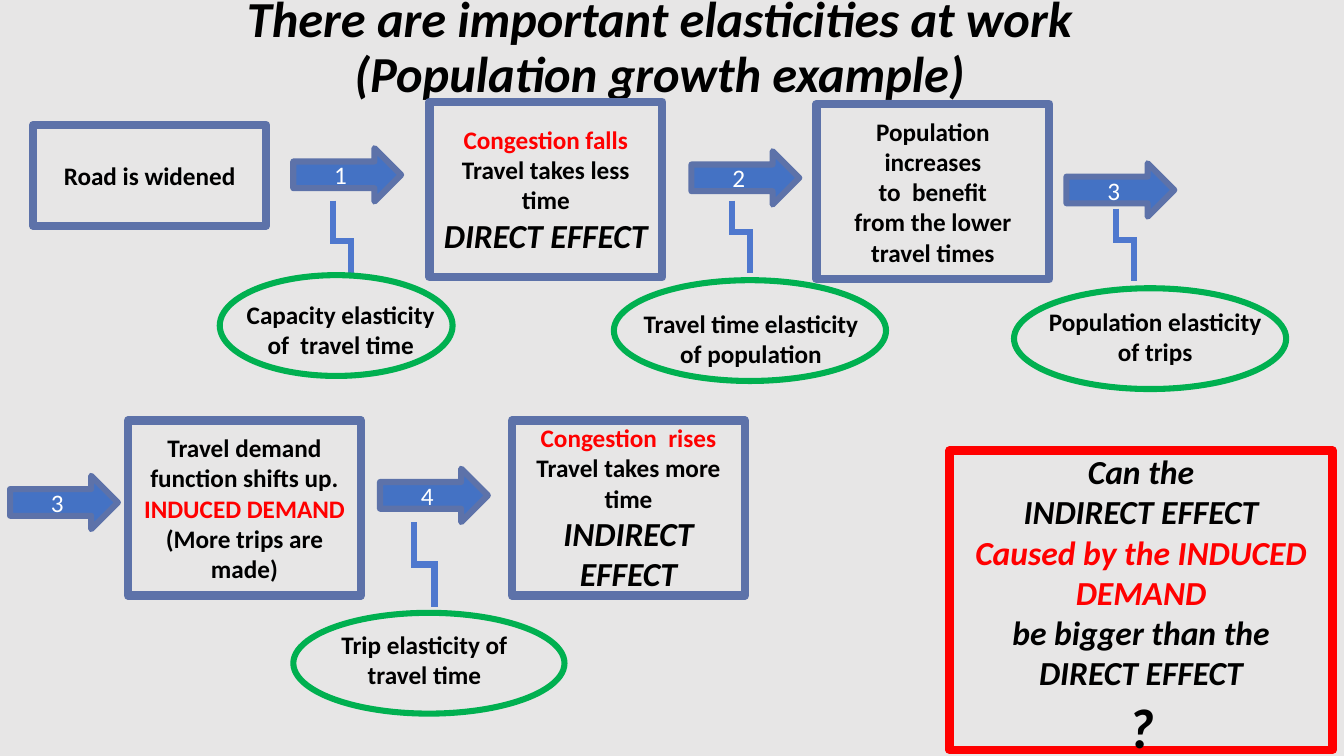
from dataclasses import dataclass

from lxml.etree import SubElement
from pptx import Presentation
from pptx.dml.color import RGBColor
from pptx.enum.shapes import MSO_CONNECTOR as Connector, MSO_SHAPE as Preset
from pptx.enum.text import MSO_ANCHOR as Anchor, PP_ALIGN as Align
from pptx.oxml.ns import qn
from pptx.shapes.base import BaseShape
from pptx.slide import Slide
from pptx.text.text import TextFrame
from pptx.util import Inches, Length, Pt

COLUMNS, ROWS = 133.33, 75
BLACK, WHITE, RED, GREEN = "000000", "FFFFFF", "FF0000", "00B050"
BACKGROUND, ARROW_BLUE, OUTLINE_BLUE, ELBOW_BLUE = "E7E6E6", "4472C4", "5D72A9", "4F78CE"
BOX_WIDTH, BOX_HEIGHT = 23.1, 17.4
ARROW_WIDTH, ARROW_HEIGHT = 10.7, 5.3
ELLIPSE_HEIGHT = 10


@dataclass
class Line:
    """One paragraph and its look."""
    text: str
    color: str = BLACK
    size: float = 18
    bold: bool = True
    italic: bool = False


@dataclass
class Box:
    """An outlined rectangle holding a step of the argument."""
    left: float
    top: float
    lines: list[Line]
    width: float = BOX_WIDTH
    height: float = BOX_HEIGHT
    color: str = OUTLINE_BLUE
    extra_top: float = 0


@dataclass
class Arrow:
    """A numbered block arrow."""
    left: float
    top: float
    number: str


@dataclass
class Elasticity:
    """A green ellipse with its caption."""
    left: float
    top: float
    width: float
    caption_left: float
    caption_top: float
    caption_width: float
    lines: list[Line]
    wrap: bool = True


@dataclass
class Elbow:
    """A stepped line running down from an arrow to an ellipse."""
    left: float
    top: float
    across: float
    down: float
    bend: float


BOXES = [
    Box(3.3, 12.4, [Line("Road is widened")], height=10),
    Box(42.6, 10.1, [Line("Congestion falls", RED), Line("Travel takes less time"),
                     Line("DIRECT EFFECT", size=24, italic=True)]),
    Box(81, 10.3, [Line("Population increases"), Line("to  benefit"),
                   Line("from the lower"), Line("travel times")]),
    Box(12.7, 41.7, [Line("Travel demand function shifts up."), Line("INDUCED DEMAND", RED),
                     Line("(More trips are made)")]),
    Box(50.8, 41.7, [Line("Congestion  rises", RED), Line("Travel takes more time"),
                     Line("INDIRECT EFFECT", size=24, italic=True)]),
    Box(94.2, 44.7, [Line("Can the", size=24, italic=True),
                     Line("INDIRECT EFFECT", size=24, italic=True),
                     Line("Caused by the INDUCED DEMAND", RED, 24, italic=True),
                     Line("be bigger than the", size=24, italic=True),
                     Line("DIRECT EFFECT", size=24, italic=True),
                     Line("?", size=40, italic=True)],
        width=38, height=29.7, color=RED, extra_top=1),
]
ARROWS = [Arrow(29.1, 14.7, "1"), Arrow(68.6, 15, "2"), Arrow(105.8, 16.2, "3"),
          Arrow(1, 47.2, "3"), Arrow(37.7, 46.5, "4")]
ELASTICITIES = [
    Elasticity(21.8, 27.3, 23.1, 23.4, 29.2, 20.8,
               [Line("Capacity elasticity"), Line("of  travel time")], wrap=False),
    Elasticity(60.9, 27.8, 27, 61, 30.1, 27,
               [Line("Travel time elasticity"), Line("of population")]),
    Elasticity(100.6, 28.6, 27, 101.1, 29.9, 27,
               [Line("Population elasticity"), Line("of trips")]),
    Elasticity(29.1, 60.8, 26.9, 32.5, 61.9, 19.2,
               [Line("Trip elasticity of"), Line("travel time")], wrap=False),
]
ELBOWS = [Elbow(33, 19.9, 1.8, 7.2, 0.56), Elbow(72.6, 19.9, 1.8, 7.2, 0.43),
          Elbow(110.7, 20.7, 1.8, 7.2, 0.43), Elbow(41.1, 51.8, 2, 8.4, 0.5)]


def cells(count: float) -> Length:
    """Turn a count of columns or rows into a length."""
    return Inches(count / 10)


def rgb(color: str) -> RGBColor:
    """Turn a hex string into a colour."""
    return RGBColor.from_string(color)


def write(frame: TextFrame, lines: list[Line], anchor: Anchor = Anchor.MIDDLE,
          wrap: bool = True, spacing: float = 1) -> None:
    """Fill a text frame with centred paragraphs."""
    frame.word_wrap = wrap
    frame.vertical_anchor = anchor
    for index, line in enumerate(lines):
        paragraph = frame.add_paragraph() if index else frame.paragraphs[0]
        paragraph.text = line.text
        paragraph.alignment = Align.CENTER
        paragraph.line_spacing = spacing
        font = paragraph.font
        font.name, font.size = "Calibri", Pt(line.size)
        font.bold, font.italic = line.bold, line.italic
        font.color.rgb = rgb(line.color)


def draw_shape(slide: Slide, preset: Preset, left: float, top: float, width: float,
               height: float, outline: str, weight: float, fill: str = "") -> BaseShape:
    """Draw a preset shape with an outline and an optional fill."""
    shape = slide.shapes.add_shape(preset, cells(left), cells(top), cells(width), cells(height))
    shape.shadow.inherit = False
    if fill:
        shape.fill.solid()
        shape.fill.fore_color.rgb = rgb(fill)
    else:
        shape.fill.background()
    shape.line.color.rgb = rgb(outline)
    shape.line.width = Pt(weight)
    return shape


def draw_caption(slide: Slide, left: float, top: float, width: float, height: float) -> TextFrame:
    """Add a text box and give its frame."""
    return slide.shapes.add_textbox(cells(left), cells(top), cells(width), cells(height)).text_frame


def draw_box(slide: Slide, box: Box) -> None:
    """Draw a step of the argument."""
    shape = draw_shape(slide, Preset.RECTANGLE, box.left, box.top, box.width, box.height,
                       box.color, 6)
    shape.text_frame.margin_top += cells(box.extra_top)
    write(shape.text_frame, box.lines)


def draw_arrow(slide: Slide, arrow: Arrow) -> None:
    """Draw a numbered arrow."""
    shape = draw_shape(slide, Preset.RIGHT_ARROW, arrow.left, arrow.top, ARROW_WIDTH,
                       ARROW_HEIGHT, OUTLINE_BLUE, 4.33, ARROW_BLUE)
    write(shape.text_frame, [Line(arrow.number, WHITE, bold=False)])


def draw_elasticity(slide: Slide, item: Elasticity) -> None:
    """Draw an ellipse and its caption."""
    draw_shape(slide, Preset.OVAL, item.left, item.top, item.width, ELLIPSE_HEIGHT, GREEN, 4.33)
    frame = draw_caption(slide, item.caption_left, item.caption_top, item.caption_width, 7.1)
    write(frame, item.lines, Anchor.TOP, item.wrap)


def draw_elbow(slide: Slide, elbow: Elbow) -> None:
    """Draw a stepped line, turned so that it leaves downwards."""
    center_x = elbow.left + elbow.across / 2
    center_y = elbow.top + elbow.down / 2
    connector = slide.shapes.add_connector(
        Connector.ELBOW,
        cells(center_x + elbow.down / 2), cells(center_y - elbow.across / 2),
        cells(center_x - elbow.down / 2), cells(center_y + elbow.across / 2))
    connector.line.color.rgb = rgb(ELBOW_BLUE)
    connector.line.width = Pt(4.5)
    properties = connector.element.spPr
    properties.find(qn("a:xfrm")).set("rot", str(270 * 60000))
    adjustments = properties.find(qn("a:prstGeom")).find(qn("a:avLst"))
    SubElement(adjustments, qn("a:gd"), name="adj1", fmla=f"val {round(elbow.bend * 100000)}")
    SubElement(properties.find(qn("a:ln")), qn("a:miter"), lim="800000")
    SubElement(properties, qn("a:effectLst"))


def main() -> None:
    """Build the slide and save it."""
    presentation = Presentation()
    presentation.slide_width, presentation.slide_height = cells(COLUMNS), cells(ROWS)
    slide = presentation.slides.add_slide(presentation.slide_layouts[6])
    slide.background.fill.solid()
    slide.background.fill.fore_color.rgb = rgb(BACKGROUND)
    title = "There are important elasticities at work\v(Population growth example)"
    write(draw_caption(slide, 2, 1, 126.9, 7.7), [Line(title, size=36, italic=True)], spacing=0.9)
    for box in BOXES:
        draw_box(slide, box)
    for arrow in ARROWS:
        draw_arrow(slide, arrow)
    for elbow in ELBOWS:
        draw_elbow(slide, elbow)
    for item in ELASTICITIES:
        draw_elasticity(slide, item)
    presentation.save("out.pptx")


if __name__ == "__main__":
    main()
